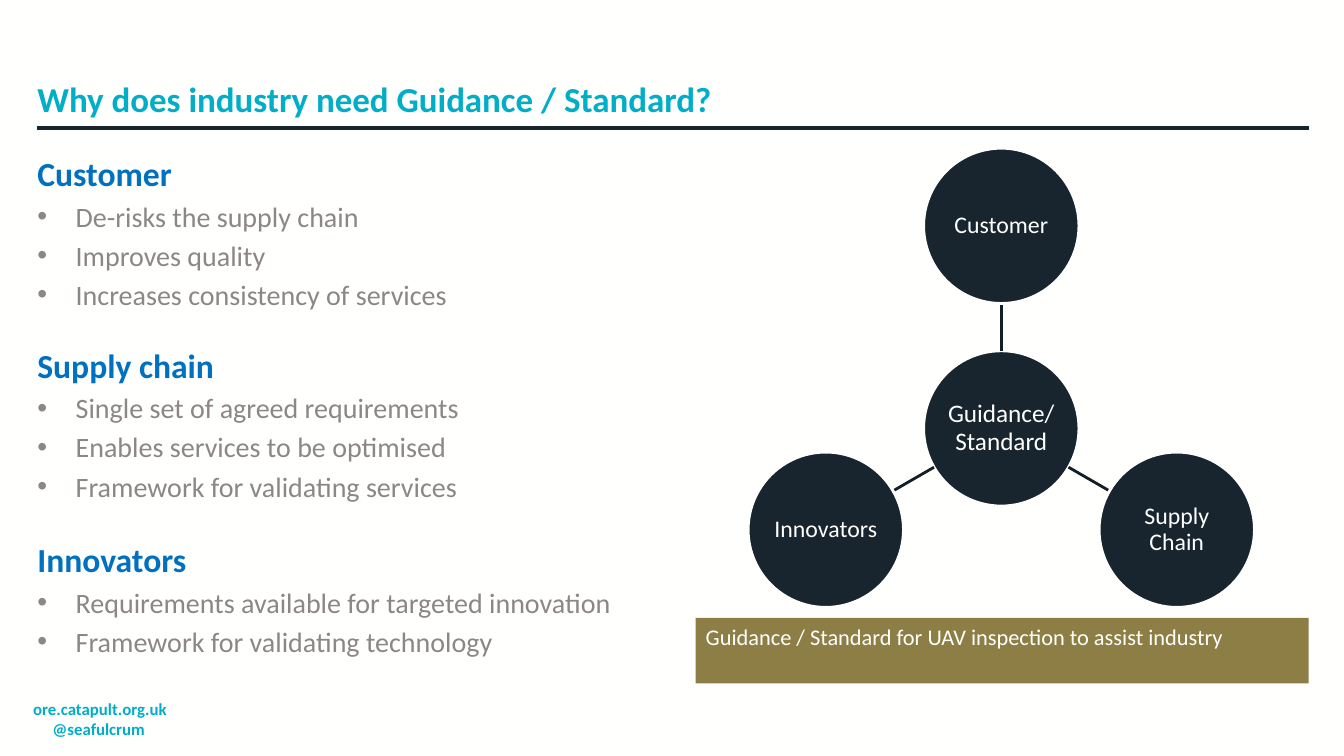
import math

from pptx import Presentation, util as u
from pptx.dml.color import RGBColor
from pptx.enum import shapes, text
from pptx.oxml import ns
from lxml import etree

WIDTH, HEIGHT = u.Inches(13.33), u.Inches(7.5)
FONT = "Calibri"
WHITE, NAVY, TEAL = "FFFFFE", "18252F", "00AEC7"
BLUE, GREY, OLIVE, SPOKE = "0070C0", "8C8686", "8D7E46", "131E26"

# Shared edges, in percent of the slide's width
LEFT, RIGHT, BANNER_LEFT, LIST_WIDTH = 2.78, 97.37, 51.76, 47.7

# Heading, top and height (percent of the slide's height), bullets
LISTS = [
    ("Customer", 19.6, 22,
     ["De-risks the supply chain", "Improves quality",
      "Increases consistency of services"]),
    ("Supply chain", 44.93, 22.8,
     ["Single set of agreed requirements", "Enables services to be optimised",
      "Framework for validating services"]),
    ("Innovators", 70.67, 17.2,
     ["Requirements available for targeted innovation",
      "Framework for validating technology"]),
]
# Outer circles and their direction from the hub, in degrees
SATELLITES = [("Customer", -90), ("Supply Chain", 30), ("Innovators", 150)]


def color(value):
    return RGBColor.from_string(value)


def across(percent):
    return round(WIDTH * percent / 100)


def down(percent):
    return round(HEIGHT * percent / 100)


def place(sp, x, y, w, h):
    sp.left, sp.top, sp.width, sp.height = across(x), down(y), across(w), down(h)


def set_frame(sp, insets=(0.1, 0.05, 0.1, 0.05), anchor=text.MSO_ANCHOR.TOP):
    tf = sp.text_frame
    tf.auto_size = text.MSO_AUTO_SIZE.NONE
    tf.word_wrap = True
    tf.vertical_anchor = anchor
    tf.margin_left, tf.margin_top, tf.margin_right, tf.margin_bottom = map(u.Inches, insets)
    return tf


def add_text(tf, words, size, fill, bold=False, align=text.PP_ALIGN.LEFT,
             before=0, spacing=1.0, indent=0, hanging=0, bullet=None):
    """Write one paragraph; the first call fills the frame's empty one."""
    p = tf.paragraphs[0]
    if p.runs:
        p = tf.add_paragraph()
    p.alignment, p.line_spacing = align, spacing
    p.space_before, p.space_after = u.Pt(before), u.Pt(0)
    props = p._p.get_or_add_pPr()
    props.set("marL", str(u.Inches(hanging)))
    props.set("indent", str(u.Inches(indent - hanging)))
    if bullet:
        etree.SubElement(props, ns.qn("a:buFont")).set("typeface", "Arial")
        etree.SubElement(props, ns.qn("a:buChar")).set("char", bullet)
    else:
        etree.SubElement(props, ns.qn("a:buNone"))
    r = p.add_run()
    r.text = words
    r.font.name, r.font.size, r.font.bold = FONT, u.Pt(size), bold
    r.font.color.rgb = color(fill)


def add_line(s, x1, y1, x2, y2, fill, width):
    line = s.shapes.add_connector(shapes.MSO_CONNECTOR.STRAIGHT, x1, y1, x2, y2)
    line.line.color.rgb = color(fill)
    line.line.width = u.Pt(width)
    etree.SubElement(line._element.spPr, ns.qn("a:effectLst"))


def add_circle(s, x, y, radius, words, size):
    sp = s.shapes.add_shape(shapes.MSO_SHAPE.OVAL, round(x - radius), round(y - radius),
                            2 * radius, 2 * radius)
    sp.shadow.inherit = False
    sp.fill.solid()
    sp.fill.fore_color.rgb = color(NAVY)
    sp.line.color.rgb = color(WHITE)
    sp.line.width = u.Pt(2)
    tf = set_frame(sp, (0.01,) * 4, text.MSO_ANCHOR.MIDDLE)
    add_text(tf, words, size, WHITE, align=text.PP_ALIGN.CENTER, spacing=0.9)


def add_list(sp, heading, top, height, bullets):
    place(sp, LEFT, top, LIST_WIDTH, height)
    tf = set_frame(sp, (0, 0.05, 0.1, 0.05))
    add_text(tf, heading, 24, BLUE, bold=True)
    for words in bullets:
        add_text(tf, words, 20, GREY, before=4, hanging=0.38, bullet="•")


def add_hub_diagram(s):
    x, y = across(74.5), down(56.67)
    radius, orbit = down(10.27), down(26.8)
    add_circle(s, x, y, radius, "Guidance/ Standard", 18)
    for words, degrees in SATELLITES:
        dx, dy = math.cos(math.radians(degrees)), math.sin(math.radians(degrees))
        near, far = radius, orbit - radius
        add_line(s, round(x + near * dx), round(y + near * dy),
                 round(x + far * dx), round(y + far * dy), SPOKE, 2)
        add_circle(s, x + orbit * dx, y + orbit * dy, radius, words, 17)


def main():
    prs = Presentation()
    prs.slide_width, prs.slide_height = WIDTH, HEIGHT
    s = prs.slides.add_slide(prs.slide_layouts.get_by_name("Comparison"))
    s.background.fill.solid()
    s.background.fill.fore_color.rgb = color(WHITE)
    title, *bodies, banner = s.placeholders

    # Title and rule
    place(title, LEFT, 4, RIGHT - LEFT, 12.93)
    tf = set_frame(title, (0, 0.04, 0.2, 0.08), text.MSO_ANCHOR.BOTTOM)
    add_text(tf, "Why does industry need Guidance / Standard?", 25, TEAL, bold=True)
    add_line(s, across(LEFT), down(16.93), across(RIGHT), down(16.93), NAVY, 3)

    # Lists
    for sp, content in zip(bodies, LISTS):
        add_list(sp, *content)

    # Hub and its three parties
    add_hub_diagram(s)

    # Banner
    place(banner, BANNER_LEFT, 81.73, RIGHT - BANNER_LEFT, 8.67)
    banner.fill.solid()
    banner.fill.fore_color.rgb = color(OLIVE)
    add_text(set_frame(banner), "Guidance / Standard for UAV inspection to assist industry",
             16, WHITE)

    # Contact lines
    contact = s.shapes.add_textbox(across(1.73), down(91.73), across(16), down(6.67))
    tf = set_frame(contact)
    add_text(tf, "ore.catapult.org.uk", 12, TEAL, bold=True)
    add_text(tf, "@seafulcrum", 12, TEAL, bold=True, indent=0.19)

    prs.save("out.pptx")


if __name__ == "__main__":
    main()
